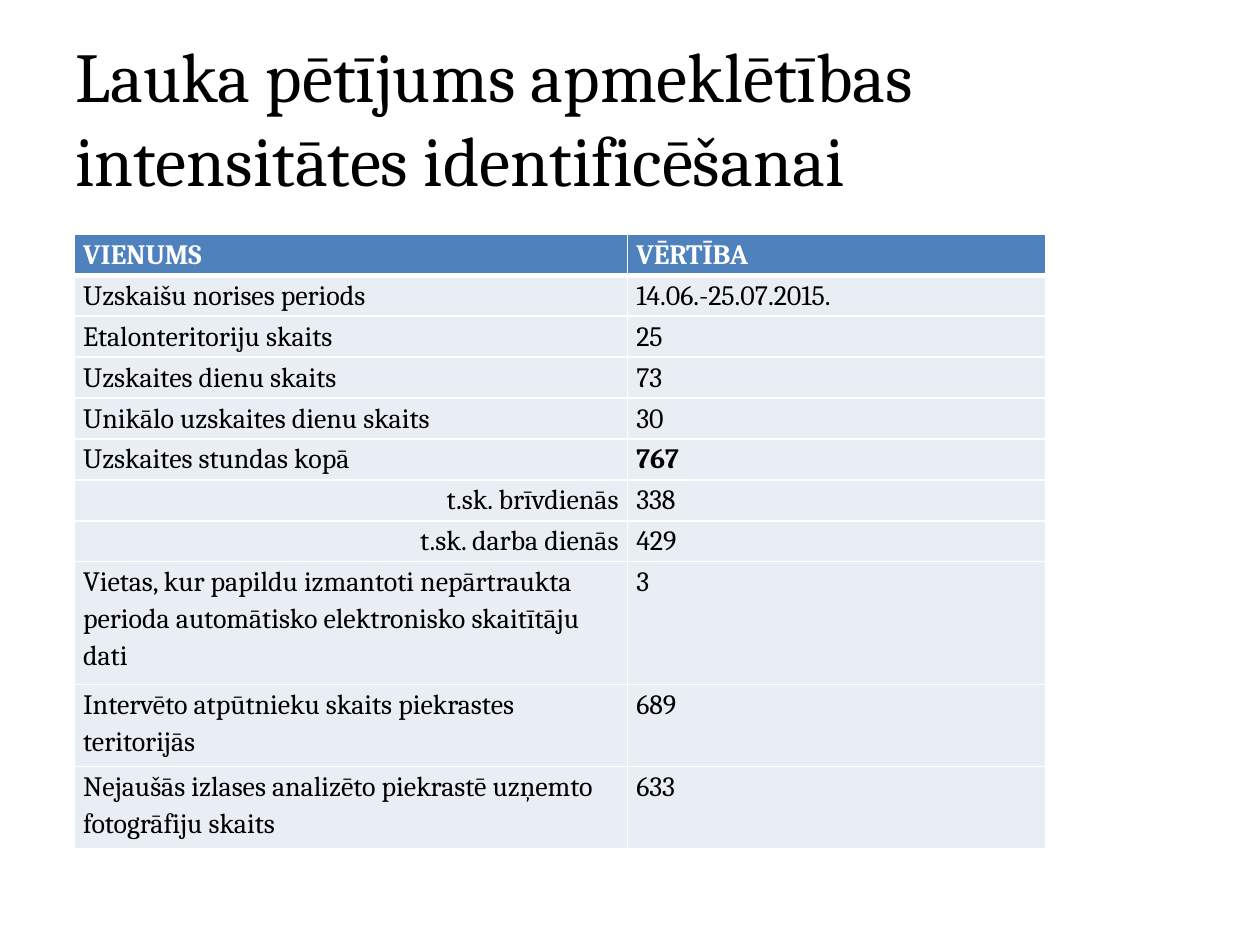
from dataclasses import dataclass

from lxml import etree
from pptx import Presentation
from pptx.dml.color import RGBColor
from pptx.enum.text import MSO_ANCHOR, PP_ALIGN
from pptx.oxml.ns import qn
from pptx.slide import Slide
from pptx.util import Inches, Pt

LEFT, RIGHT = PP_ALIGN.LEFT, PP_ALIGN.RIGHT
MIDDLE = MSO_ANCHOR.MIDDLE

COLORS = {"text": "000000", "white": "FFFFFF", "header": "4F81BD", "body": "E9EDF4"}

TITLE = "Lauka pētījums apmeklētības intensitātes identificēšanai"
HEADER = ("VIENUMS", "VĒRTĪBA")
RECORDS = [
    ("Uzskaišu norises periods", "14.06.-25.07.2015."),
    ("Etalonteritoriju skaits", "25"),
    ("Uzskaites dienu skaits", "73"),
    ("Unikālo uzskaites dienu skaits", "30"),
    ("Uzskaites stundas kopā", "767"),
    ("t.sk. brīvdienās", "338"),
    ("t.sk. darba dienās", "429"),
    ("Vietas, kur papildu izmantoti nepārtraukta perioda automātisko "
     "elektronisko skaitītāju dati", "3"),
    ("Intervēto atpūtnieku skaits piekrastes teritorijās", "689"),
    ("Nejaušās izlases analizēto piekrastē uzņemto fotogrāfiju skaits", "633"),
]
TOTAL_HOURS = "767"
SUBITEM_PREFIX = "t.sk."
COLUMN_WIDTHS = (4.39, 3.32)
LINE_HEIGHT = 0.325
LINES_PER_ROW = [1] * 8 + [3, 2, 2]


@dataclass
class SlideBuilder:
    slide: Slide
    font: str = "Cambria"
    title_size: int = 40
    table_size: int = 16

    def add_run(self, paragraph, text, size, color, bold=False):
        run = paragraph.add_run()
        run.text = text
        run.font.name = self.font
        run.font.size = Pt(size)
        run.font.bold = bold
        run.font.color.rgb = RGBColor.from_string(COLORS[color])

    def add_title(self, text, left, top, width, height):
        shape = self.slide.shapes.add_textbox(
            Inches(left), Inches(top), Inches(width), Inches(height))
        frame = shape.text_frame
        frame.word_wrap = True
        frame.vertical_anchor = MIDDLE
        self.add_run(frame.paragraphs[0], text, self.title_size, "text")

    def add_borders(self, cell, bottom_width):
        """Draw white cell edges; they must precede the fill in the XML."""
        properties = cell._tc.get_or_add_tcPr()
        widths = {"a:lnL": 1, "a:lnR": 1, "a:lnT": 1, "a:lnB": bottom_width}
        for index, (tag, width) in enumerate(widths.items()):
            line = etree.Element(qn(tag), w=str(Pt(width)))
            fill = etree.SubElement(line, qn("a:solidFill"))
            etree.SubElement(fill, qn("a:srgbClr"), val=COLORS["white"])
            properties.insert(index, line)

    def fill_cell(self, cell, text, is_header):
        cell.margin_left = cell.margin_right = Inches(0.07)
        cell.margin_top = cell.margin_bottom = 0
        cell.fill.solid()
        cell.fill.fore_color.rgb = RGBColor.from_string(
            COLORS["header" if is_header else "body"])
        self.add_borders(cell, 3 if is_header else 1)
        paragraph = cell.text_frame.paragraphs[0]
        paragraph.line_spacing = 1.15
        paragraph.alignment = RIGHT if text.startswith(SUBITEM_PREFIX) else LEFT
        self.add_run(paragraph, text, self.table_size,
                     "white" if is_header else "text",
                     bold=is_header or text == TOTAL_HOURS)

    def add_table(self, records, left, top):
        table = self.slide.shapes.add_table(
            len(records), len(COLUMN_WIDTHS), Inches(left), Inches(top),
            Inches(sum(COLUMN_WIDTHS)),
            Inches(LINE_HEIGHT * sum(LINES_PER_ROW))).table
        for column, width in zip(table.columns, COLUMN_WIDTHS):
            column.width = Inches(width)
        for row, lines in zip(table.rows, LINES_PER_ROW):
            row.height = Inches(LINE_HEIGHT * lines)
        for row_index, record in enumerate(records):
            for column_index, text in enumerate(record):
                self.fill_cell(table.cell(row_index, column_index), text,
                               is_header=row_index == 0)


def main():
    presentation = Presentation()
    presentation.slide_width = Inches(10)
    presentation.slide_height = Inches(7.5)
    slide = presentation.slides.add_slide(presentation.slide_layouts[6])
    builder = SlideBuilder(slide)
    builder.add_title(TITLE, 0.5, 0.3, 9, 1.25)
    builder.add_table([HEADER] + RECORDS, 0.59, 1.86)
    presentation.save("out.pptx")


if __name__ == "__main__":
    main()
